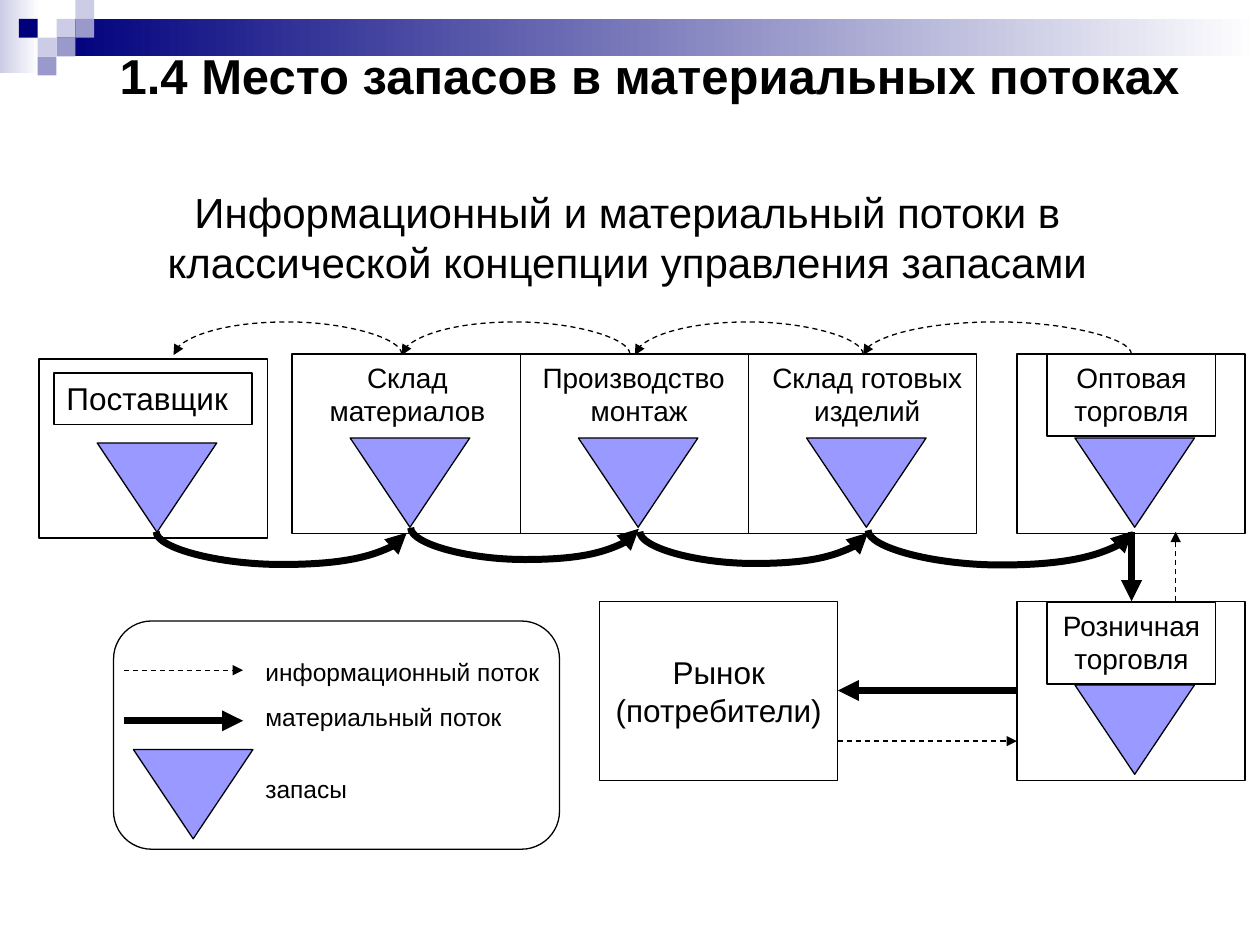
from lxml import etree
from pptx import Presentation
from pptx.dml.color import RGBColor
from pptx.enum.dml import MSO_LINE
from pptx.enum.shapes import MSO_CONNECTOR, MSO_SHAPE
from pptx.enum.text import MSO_ANCHOR, PP_ALIGN
from pptx.oxml.ns import qn
from pptx.util import Cm, Pt

RECT, ROUND = MSO_SHAPE.RECTANGLE, MSO_SHAPE.ROUNDED_RECTANGLE
MERGE = MSO_SHAPE.FLOWCHART_MERGE
STRAIGHT, CURVE = MSO_CONNECTOR.STRAIGHT, MSO_CONNECTOR.CURVE
LEFT, CENTER = PP_ALIGN.LEFT, PP_ALIGN.CENTER
TOP, MIDDLE = MSO_ANCHOR.TOP, MSO_ANCHOR.MIDDLE
BLACK, STOCK = "000000", "9999FF"
NAVY, MID, PALE, WHITE = "00007D", "9999CC", "CCCCE6", "FFFFFF"

# All places and sizes are in centimetres.
HEADING = "1.4 Место запасов в материальных потоках"
SUBTITLE = ("Информационный и материальный потоки в "
            "классической концепции управления запасами")
BANDS = [((0, 0, 0.79, 1.47), PALE), ((1.14, 0.38, 24.26, 0.76), NAVY)]
CELL = 0.38
CELLS = [(3, 1, PALE), (4, 0, PALE), (4, 1, MID), (2, 2, PALE),
         (1, 1, NAVY), (3, 2, MID), (2, 3, MID)]  # column, row, colour

BOX_W, BOX_H = 4.6, 3.61
TRI_W, TRI_H = 2.41, 1.8
TRI_DX, TRI_DY = 1.17, 1.69
# box corner, label place, label paragraphs with alignment, size, framed label
STAGES = [
    ((0.79, 7.24), (1.09, 7.52, 3.99, 1.04), [("Поставщик", LEFT)], 18, True),
    ((5.89, 7.14), (6.22, 7.14, 3.99, 1.63), [("Склад материалов", CENTER)], 16, False),
    ((10.49, 7.14), (10.69, 7.14, 4.39, 1.63),
     [("Производство", LEFT), ("монтаж", CENTER)], 16, False),
    ((15.09, 7.14), (15.29, 7.14, 4.39, 1.63),
     [("Склад готовых изделий", CENTER)], 16, False),
    ((20.5, 7.14), (21.11, 7.14, 3.4, 1.65), [("Оптовая торговля", CENTER)], 16, True),
    ((20.5, 12.12), (21.11, 12.14, 3.4, 1.65), [("Розничная торговля", CENTER)], 16, True),
]
MARKET = ((12.09, 12.12, 4.8, BOX_H), "Рынок (потребители)")
LEGEND_BOX = (2.29, 12.52, 8.99, 4.6)
LEGEND_TRI = (2.69, 15.11)
LEGEND = [("информационный поток", 13.13), ("материальный поток", 14.02),
          ("запасы", 15.47)]

MATERIAL = {"width": Pt(4)}
INFO = {"width": Pt(0.75), "dash_style": MSO_LINE.DASH}
ARROWS = [  # start, end, line format
    ((22.81, 10.72), (22.81, 12.12), MATERIAL),
    ((20.5, 13.92), (16.89, 13.92), MATERIAL),
    ((2.49, 14.53), (4.9, 14.53), MATERIAL),
    ((2.49, 13.51), (4.9, 13.51), INFO),
    ((16.89, 14.94), (20.5, 14.94), INFO),
    ((23.7, 12.12), (23.7, 10.72), INFO),
]
DROP = 0.02  # height between the two ends of an arc
ARCS = [  # start x, end x, y, depth of the bend (negative is upward), format
    (3.15, 8.2, 10.72, 0.66, MATERIAL),
    (8.28, 12.88, 10.64, 0.64, MATERIAL),
    (12.9, 17.5, 10.72, 0.64, MATERIAL),
    (17.5, 22.83, 10.69, 0.7, MATERIAL),
    (22.81, 17.4, 7.14, -0.65, INFO),
    (17.4, 12.8, 7.14, -0.65, INFO),
    (12.7, 8.1, 7.14, -0.65, INFO),
    (8.1, 3.5, 7.14, -0.65, INFO),
]


def rgb(color):
    return RGBColor.from_string(color)


def write(sp, paragraphs, size, bold=False, anchor=TOP):
    tf = sp.text_frame
    tf.word_wrap = True
    tf.vertical_anchor = anchor
    for i, (text, align) in enumerate(paragraphs):
        p = tf.add_paragraph() if i else tf.paragraphs[0]
        p.alignment = align
        r = p.add_run()
        r.text = text
        for name, value in {"name": "Arial", "size": Pt(size), "bold": bold}.items():
            setattr(r.font, name, value)
        r.font.color.rgb = rgb(BLACK)


def add_text(place, paragraphs, size, bold=False):
    sp = shapes.add_textbox(*map(Cm, place))
    write(sp, paragraphs, size, bold)


def add_shape(kind, place, fill=None, line=BLACK):
    sp = shapes.add_shape(kind, *map(Cm, place))
    sp.shadow.inherit = False
    if fill:
        sp.fill.solid()
        sp.fill.fore_color.rgb = rgb(fill)
    else:
        sp.fill.background()
    if line:
        sp.line.color.rgb = rgb(line)
        sp.line.width = Pt(0.75)
    else:
        sp.line.fill.background()
    return sp


def add_stock(x, y):
    add_shape(MERGE, (x, y, TRI_W, TRI_H), STOCK)


def add_arrow(kind, start, end, style):
    c = shapes.add_connector(kind, *map(Cm, start + end))
    c.line.color.rgb = rgb(BLACK)
    for name, value in style.items():
        setattr(c.line, name, value)
    etree.SubElement(c.line._get_or_add_ln(), qn("a:tailEnd"), type="triangle")
    etree.SubElement(c._element.spPr, qn("a:effectLst"))
    return c


def add_arc(x1, x2, y, depth, style):
    """Draw a curved connector turned a quarter so that it bends vertically."""
    span = abs(x2 - x1)
    left, top = (x1 + x2 - DROP) / 2, y + (DROP - span) / 2
    c = add_arrow(CURVE, (left, top), (left + DROP, top + span), style)
    xfrm = c._element.spPr.find(qn("a:xfrm"))
    xfrm.set("rot", str(270 * 60000))
    xfrm.set("flipH", "1")
    if x2 < x1:
        xfrm.set("flipV", "1")
    geom = c._element.spPr.find(qn("a:prstGeom"))
    guides = geom.find(qn("a:avLst"))
    if guides is None:
        guides = etree.SubElement(geom, qn("a:avLst"))
    etree.SubElement(guides, qn("a:gd"), name="adj1",
                     fmla=f"val {round(depth / DROP * 100000)}")


prs = Presentation()
prs.slide_width, prs.slide_height = Cm(25.4), Cm(19.05)
slide = prs.slides.add_slide(prs.slide_layouts[5])
shapes = slide.shapes

for place, color in BANDS:
    sp = add_shape(RECT, place, line=None)
    sp.fill.gradient()
    sp.fill.gradient_angle = 0
    for stop, stop_color in zip(sp.fill.gradient_stops, (color, WHITE)):
        stop.color.rgb = rgb(stop_color)
for col, row, color in CELLS:
    add_shape(RECT, (col * CELL, row * CELL, CELL, CELL), color, None)

title = shapes.title
title.left, title.top, title.width, title.height = map(Cm, (2.59, 3.18, 20.12, 3.18))
write(title, [(SUBTITLE, CENTER)], 24, anchor=MIDDLE)
add_text((0.79, 0.79, 24.61, 1.45), [(HEADING, CENTER)], 28, True)

for (x, y), label, paragraphs, size, framed in STAGES:
    add_shape(RECT, (x, y, BOX_W, BOX_H))
    if framed:
        write(add_shape(RECT, label), paragraphs, size)
    else:
        add_text(label, paragraphs, size)
    add_stock(x + TRI_DX, y + TRI_DY)

place, text = MARKET
write(add_shape(RECT, place), [(text, CENTER)], 18, anchor=MIDDLE)

add_shape(ROUND, LEGEND_BOX)
add_stock(*LEGEND_TRI)
for text, y in LEGEND:
    add_text((5.1, y, 6.2, 0.84), [(text, LEFT)], 14)

for start, end, style in ARROWS:
    add_arrow(STRAIGHT, start, end, style)
for arc in ARCS:
    add_arc(*arc)

prs.save("out.pptx")
